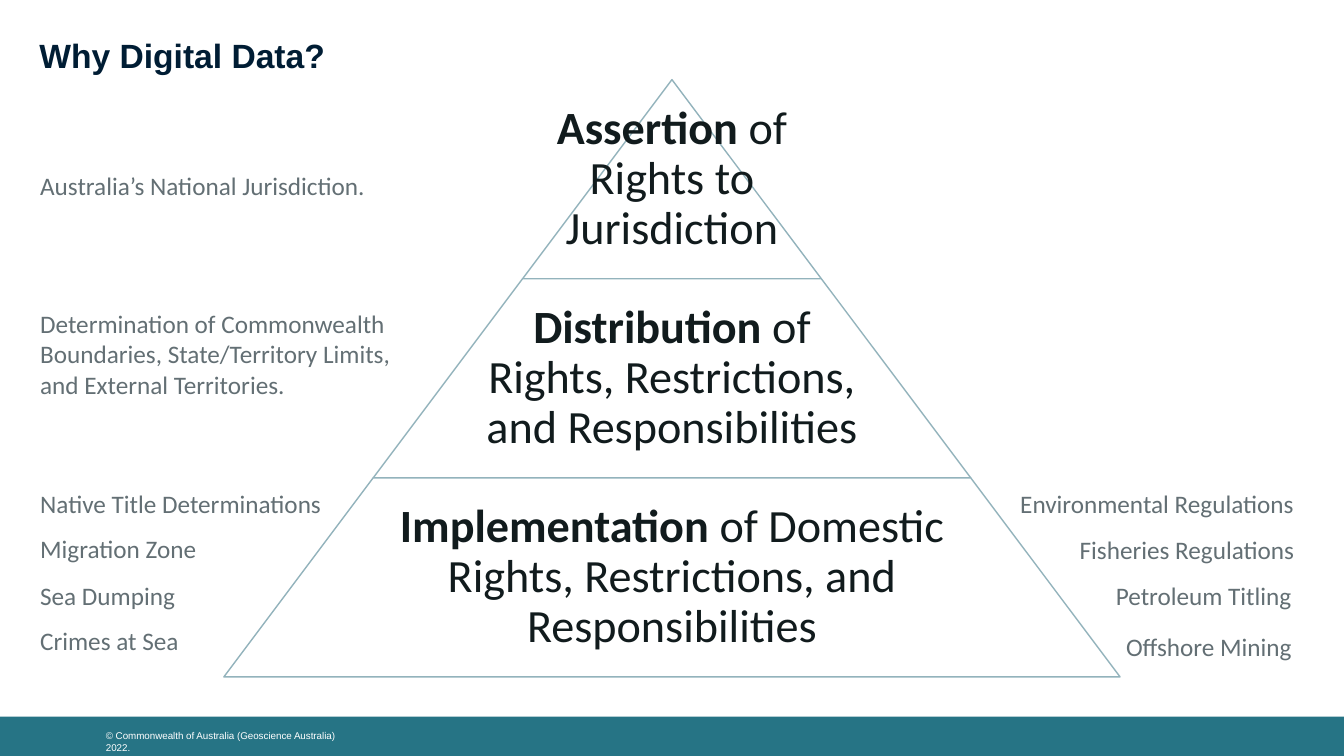
from pptx import Presentation
from pptx.dml.color import RGBColor
from pptx.enum import shapes, text
from pptx.util import Inches, Pt

COLORS = {"title": "001D34", "tier_text": "111B1D", "tier_line": "93B3BC",
          "label": "636F74", "band": "267485", "white": "FFFFFF"}
TITLE = {"name": "Arial", "size": Pt(24), "bold": True}
TIER = {"name": "Calibri", "size": Pt(33)}
LABEL = {"name": "Calibri", "size": Pt(18)}
FOOTER = {"name": "Arial", "size": Pt(7)}


def add_run(paragraph, content, color, font_format):
    run = paragraph.add_run()
    run.text = content
    run.font.color.rgb = RGBColor.from_string(COLORS[color])
    for name, value in font_format.items():
        setattr(run.font, name, value)


def add_text_frame(left, top, width, height, margin_x=0.1, margin_y=0.05):
    """Add a wrapping text box and return its text frame."""
    box = slide.shapes.add_textbox(Inches(left), Inches(top), Inches(width), Inches(height))
    frame = box.text_frame
    frame.word_wrap = True
    frame.margin_left = frame.margin_right = Inches(margin_x)
    frame.margin_top = frame.margin_bottom = Inches(margin_y)
    return frame


presentation = Presentation()
presentation.slide_width = Inches(13.33)
presentation.slide_height = Inches(7.5)
slide = presentation.slides.add_slide(presentation.slide_layouts[5])

# Footer band
band = slide.shapes.add_shape(shapes.MSO_SHAPE.RECTANGLE, Inches(0), Inches(7.11),
                              Inches(13.33), Inches(0.39))
band.shadow.inherit = False
band.fill.solid()
band.fill.fore_color.rgb = RGBColor.from_string(COLORS["band"])
band.line.fill.background()
footer = add_text_frame(1.05, 7.24, 2.45, 0.12, 0, 0)
add_run(footer.paragraphs[0], "© Commonwealth of Australia (Geoscience Australia) 2022.",
        "white", FOOTER)

# Title
title = slide.shapes.title
title.left, title.top = Inches(0.39), Inches(0.39)
title.width, title.height = Inches(12.54), Inches(0.36)
frame = title.text_frame
frame.margin_left = frame.margin_right = frame.margin_top = frame.margin_bottom = 0
frame.vertical_anchor = text.MSO_ANCHOR.MIDDLE
frame.auto_size = text.MSO_AUTO_SIZE.NONE
paragraph = frame.paragraphs[0]
paragraph.alignment = text.PP_ALIGN.LEFT
paragraph.line_spacing = 0.9
add_run(paragraph, "Why Digital Data?", "title", TITLE)

# Pyramid: each tier is one top-tier width wider than the tier above
CENTER, PYRAMID_TOP, TIER_WIDTH, TIER_HEIGHT = 6.665, 0.79, 2.963, 1.975
tiers = [
    ("Assertion", " of Rights to Jurisdiction", 1),
    ("Distribution", " of Rights, Restrictions, and Responsibilities", 0.65),
    ("Implementation", " of Domestic Rights, Restrictions, and Responsibilities", 0.65),
]
for index, (keyword, remainder, text_share) in enumerate(tiers):
    width = TIER_WIDTH * (index + 1)
    top = PYRAMID_TOP + TIER_HEIGHT * index
    tier = slide.shapes.add_shape(shapes.MSO_SHAPE.TRAPEZOID, Inches(CENTER - width / 2),
                                  Inches(top), Inches(width), Inches(TIER_HEIGHT))
    tier.adjustments[0] = 0.75
    tier.shadow.inherit = False
    tier.fill.solid()
    tier.fill.fore_color.rgb = RGBColor.from_string(COLORS["white"])
    tier.line.color.rgb = RGBColor.from_string(COLORS["tier_line"])
    tier.line.width = Pt(1)

    text_width = width * text_share
    frame = add_text_frame(CENTER - text_width / 2, top, text_width, TIER_HEIGHT, 0.05)
    frame.vertical_anchor = text.MSO_ANCHOR.MIDDLE
    paragraph = frame.paragraphs[0]
    paragraph.alignment = text.PP_ALIGN.CENTER
    paragraph.line_spacing = 0.9
    add_run(paragraph, keyword, "tier_text", {**TIER, "bold": True})
    add_run(paragraph, remainder, "tier_text", {**TIER, "bold": False})

# Labels beside the pyramid: text, left, top, width, height, wrap
labels = [
    ("Australia’s National Jurisdiction.", 0.3, 1.64, 3.46, 0.4, False),
    ("Determination of Commonwealth Boundaries, State/Territory Limits, "
     "and External Territories.", 0.3, 3.01, 3.85, 1.01, True),
    ("Native Title Determinations", 0.3, 4.8, 3.02, 0.4, False),
    ("Migration Zone", 0.3, 5.24, 1.77, 0.4, False),
    ("Sea Dumping", 0.3, 5.71, 1.56, 0.4, False),
    ("Crimes at Sea", 0.3, 6.15, 1.59, 0.4, False),
    ("Environmental Regulations", 10.02, 4.8, 2.95, 0.4, False),
    ("Fisheries Regulations", 10.61, 5.25, 2.35, 0.4, False),
    ("Petroleum Titling", 10.97, 5.71, 1.96, 0.4, False),
    ("Offshore Mining", 11.07, 6.21, 1.87, 0.4, False),
]
for content, left, top, width, height, wrap in labels:
    frame = add_text_frame(left, top, width, height)
    frame.word_wrap = wrap
    frame.auto_size = text.MSO_AUTO_SIZE.SHAPE_TO_FIT_TEXT
    add_run(frame.paragraphs[0], content, "label", LABEL)

presentation.save("out.pptx")
